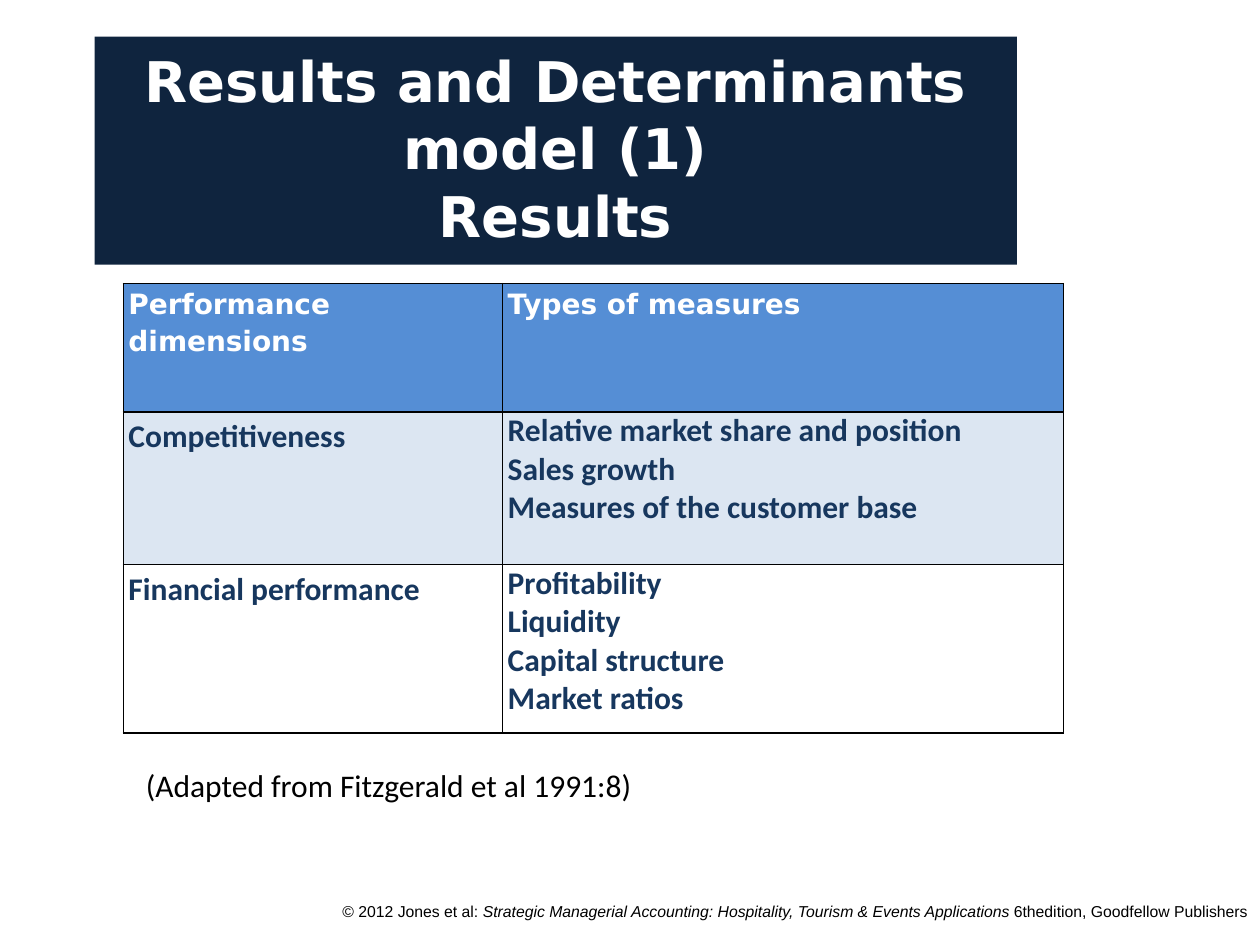
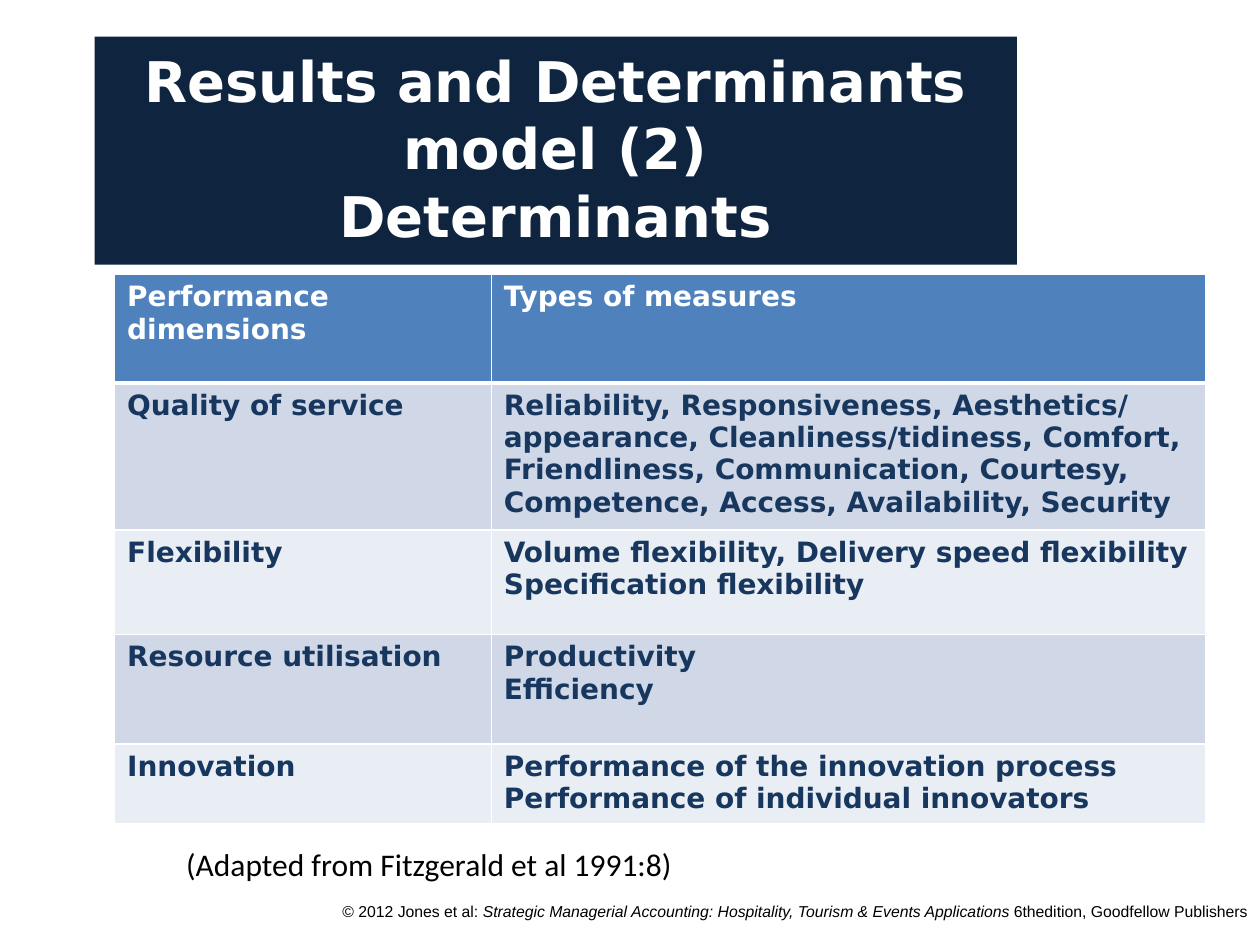
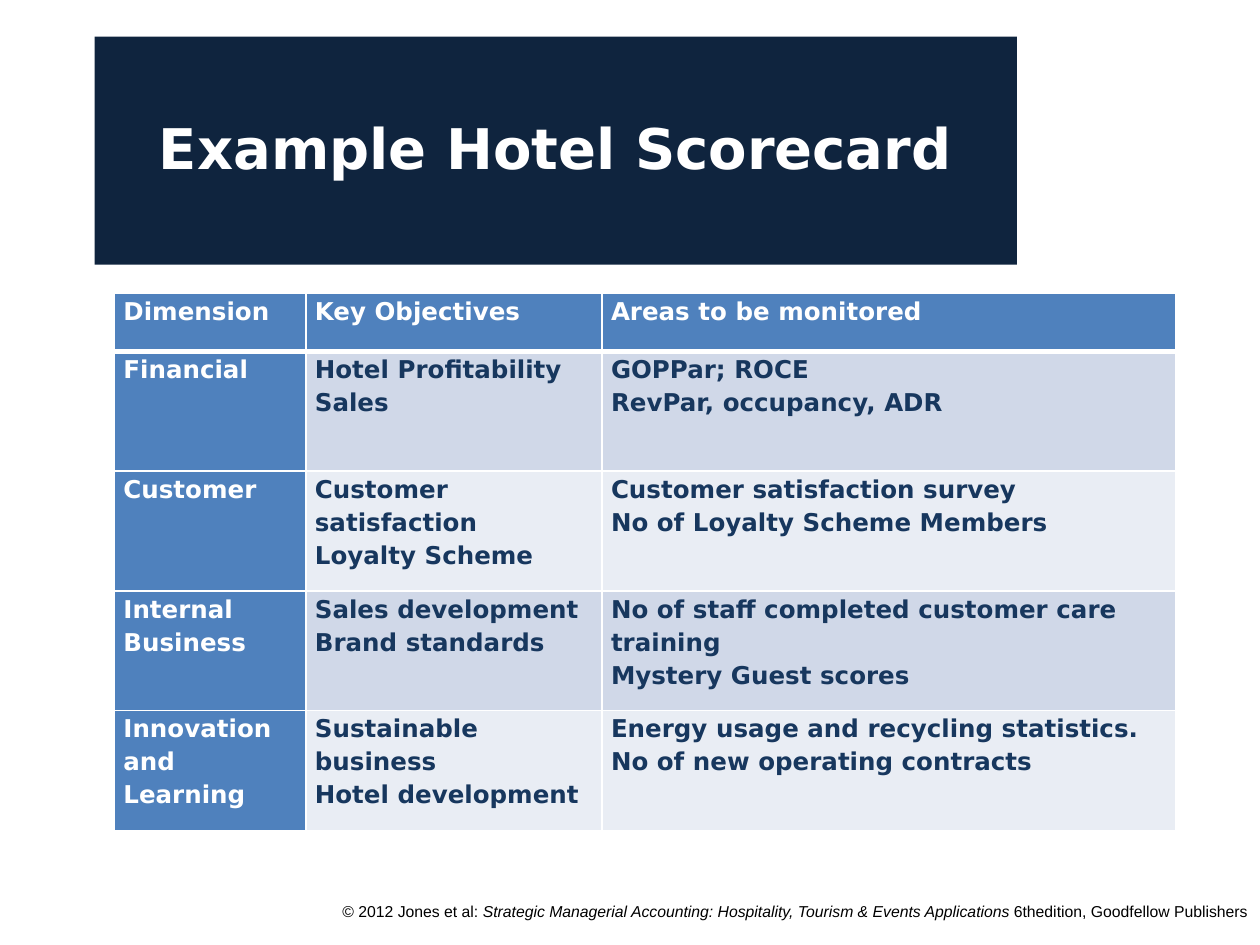
import pptx
import pptx.dml.color
import pptx.enum.shapes
import pptx.enum.text
import pptx.oxml
import pptx.oxml.ns
import pptx.util

Inches = pptx.util.Inches
ALIGN = pptx.enum.text.PP_ALIGN
ANCHOR = pptx.enum.text.MSO_ANCHOR

WHITE, BLACK, NAVY, INK = "FFFFFF", "000000", "0F243E", "17375E"
BLUE, BANDS = "4F81BD", ("D0D8E8", "E9EDF4")
SANS, BODY, SMALL = "DejaVu Sans", "Calibri", "Arial"
SOURCE = "(Adapted from Fitzgerald et al 1991:8)"
CREDIT = ("© 2012 Jones et al: *Strategic Managerial Accounting: Hospitality, "
          "Tourism & Events Applications *6thedition, Goodfellow Publishers")
HEADS = ["Performance dimensions", "Types of measures"]

RESULTS = [
    HEADS,
    ["Competitiveness",
     "Relative market share and position\nSales growth\nMeasures of the customer base"],
    ["Financial performance",
     "Profitability\nLiquidity\nCapital structure\nMarket ratios"],
]
CAUSES = [
    HEADS,
    ["Quality of service",
     "Reliability, Responsiveness, Aesthetics/ appearance, Cleanliness/tidiness, "
     "Comfort, Friendliness, Communication, Courtesy, Competence, Access, "
     "Availability, Security"],
    ["Flexibility",
     "Volume flexibility, Delivery speed flexibility\nSpecification flexibility"],
    ["Resource utilisation", "Productivity\nEfficiency"],
    ["Innovation",
     "Performance of the innovation process\nPerformance of individual innovators"],
]
SCORES = [
    ["Dimension", "Key Objectives", "Areas to be monitored"],
    ["Financial", "Hotel Profitability\nSales",
     "GOPPar; ROCE\nRevPar, occupancy, ADR"],
    ["Customer", "Customer satisfaction\nLoyalty Scheme",
     "Customer satisfaction survey\nNo of Loyalty Scheme Members"],
    ["Internal Business", "Sales development\nBrand standards",
     "No of staff completed customer care training\nMystery Guest scores"],
    ["Innovation and Learning", "Sustainable business\nHotel development",
     "Energy usage and recycling statistics.\nNo of new operating contracts"],
]


def hue(code):
    """Turn a hex string into a colour."""
    return pptx.dml.color.RGBColor.from_string(code)


def write(frame, text, size=18, font=BODY, color=BLACK, bold=False,
          align=ALIGN.LEFT, pitch=1.0):
    """Fill a frame with one paragraph per line, with *marked* parts in italics."""
    for i, line in enumerate(text.split("\n")):
        para = frame.paragraphs[0] if i == 0 else frame.add_paragraph()
        para.alignment = align
        para.line_spacing = pitch
        for j, part in enumerate(line.split("*")):
            run = para.add_run()
            run.text = part
            run.font.size = pptx.util.Pt(size)
            run.font.name = font
            run.font.bold = bold
            run.font.italic = j % 2 == 1
            run.font.color.rgb = hue(color)


def label(slide, text, left, top, width, height, wrap=True, **style):
    """Add a text box."""
    box = slide.shapes.add_textbox(
        Inches(left), Inches(top), Inches(width), Inches(height))
    box.text_frame.word_wrap = wrap
    write(box.text_frame, text, **style)


def banner(slide, title):
    """Add the dark title band."""
    band = slide.shapes.add_shape(
        pptx.enum.shapes.MSO_SHAPE.RECTANGLE,
        Inches(0.75), Inches(0.29), Inches(7.32), Inches(1.81))
    band.shadow.inherit = False
    band.fill.solid()
    band.fill.fore_color.rgb = hue(NAVY)
    band.line.fill.background()
    frame = band.text_frame
    frame.word_wrap = True
    frame.vertical_anchor = ANCHOR.MIDDLE
    frame.margin_bottom = Inches(0.1)
    write(frame, title, size=32, font=SANS, color=WHITE, bold=True,
          align=ALIGN.CENTER)


def edge(cell, side, color, width):
    """Draw one border of a cell."""
    line = pptx.oxml.parse_xml(
        f'<a:ln{side} {pptx.oxml.ns.nsdecls("a")} w="{pptx.util.Pt(width)}">'
        f'<a:solidFill><a:srgbClr val="{color}"/></a:solidFill></a:ln{side}>')
    cell._tc.get_or_add_tcPr().append(line)


def paint(cell, fill):
    """Fill a cell, or clear it when no colour is given."""
    if fill:
        cell.fill.solid()
        cell.fill.fore_color.rgb = hue(fill)
    else:
        cell.fill.background()


def grid(slide, data, left, top, cols, rows, head=BLUE, bands=BANDS,
         line=WHITE, rule=3, inset=(0.1, 0.05), side=False, style=None):
    """Add a table; style gives the text format for a row and column."""
    table = slide.shapes.add_table(
        len(rows), len(cols), Inches(left), Inches(top),
        Inches(sum(cols)), Inches(sum(rows))).table
    for col, width in zip(table.columns, cols):
        col.width = Inches(width)
    for row, height in zip(table.rows, rows):
        row.height = Inches(height)
    for r, texts in enumerate(data):
        for c, text in enumerate(texts):
            cell = table.cell(r, c)
            cell.margin_left = cell.margin_right = Inches(inset[0])
            cell.margin_top = cell.margin_bottom = Inches(inset[1])
            widths = {"L": 1, "R": 1, "T": rule if r == 1 else 1,
                      "B": rule if r == 0 else 1}
            for name, width in widths.items():
                edge(cell, name, line, width)
            key = r == 0 or (side and c == 0)
            paint(cell, head if key else bands[(r - 1) % 2])
            write(cell.text_frame, text, color=WHITE if key else INK,
                  bold=True, **style(r, c))


def mixed(r, c):
    """Give the text format of the results table."""
    return {"size": 18 if r else 16, "font": BODY if r else SANS,
            "pitch": 1.0 if r and c else 1.15}


def plain(r, c):
    """Give the text format of the determinants table."""
    return {"size": 16, "font": SANS}


def tight(r, c):
    """Give the text format of the scorecard table."""
    return {"size": 14, "font": SANS, "pitch": 1.15}


def start(deck, title):
    """Add a slide with its footer and title."""
    slide = deck.slides.add_slide(deck.slide_layouts[6])
    label(slide, CREDIT, 2.23, 7.11, 7.77, 0.39, size=9, font=SMALL,
          align=ALIGN.RIGHT)
    banner(slide, title)
    return slide


def main():
    """Build the deck."""
    deck = pptx.Presentation()
    deck.slide_width, deck.slide_height = Inches(10), Inches(7.5)

    slide = start(deck, "Results and Determinants model (1)\nResults")
    grid(slide, RESULTS, 0.98, 2.25, [3.01, 4.45], [1.02, 1.21, 1.34],
         head="558ED5", bands=("DCE6F2", None), line=BLACK, rule=1,
         inset=(0.04, 0), style=mixed)
    label(slide, SOURCE, 1.06, 6.03, 4.1, 0.4, wrap=False)

    slide = start(deck, "Results and Determinants model (2)\nDeterminants")
    grid(slide, CAUSES, 0.91, 2.18, [2.99, 5.67],
         [0.86, 1.13, 0.83, 0.87, 0.61], style=plain)
    label(slide, SOURCE, 1.38, 6.66, 4.1, 0.4, wrap=False)

    slide = start(deck, "Example Hotel Scorecard")
    grid(slide, SCORES, 0.91, 2.33, [1.52, 2.35, 4.55], [0.46] + [0.95] * 4,
         inset=(0.07, 0), side=True, style=tight)

    deck.save("out.pptx")


if __name__ == "__main__":
    main()
